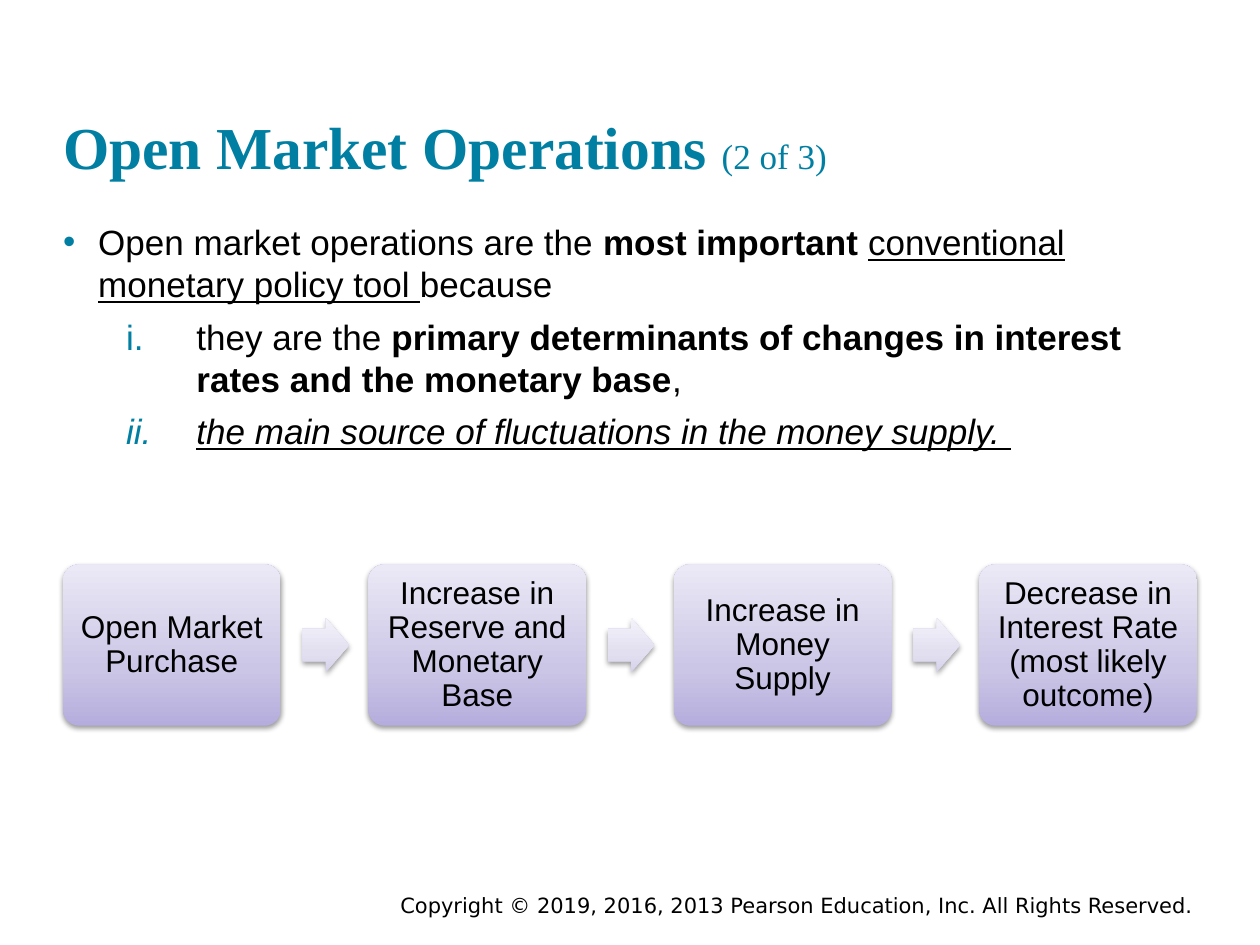
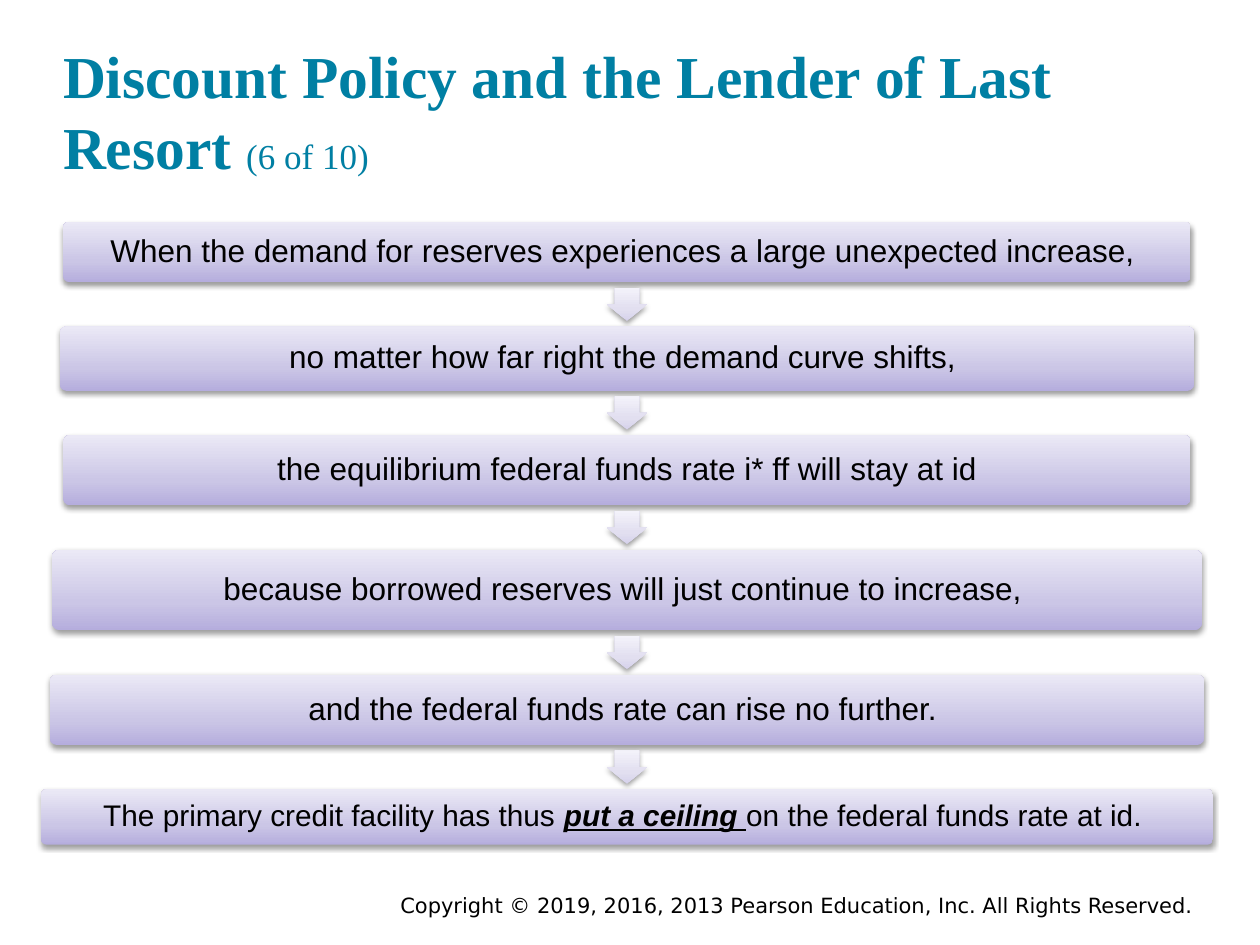
import copy
import dataclasses

import pptx
import pptx.dml.color
import pptx.enum.shapes
import pptx.enum.text
import pptx.oxml
import pptx.oxml.ns
import pptx.oxml.xmlchemy
import pptx.util

Cm = pptx.util.Cm
Pt = pptx.util.Pt
qn = pptx.oxml.ns.qn
new_element = pptx.oxml.xmlchemy.OxmlElement
ALIGN = pptx.enum.text.PP_ALIGN
ANCHOR = pptx.enum.text.MSO_ANCHOR
PRESET = pptx.enum.shapes.MSO_SHAPE


@dataclasses.dataclass(frozen=True)
class Theme:
    accent: str = "007FA3"
    ink: str = "000000"
    box_stops: tuple = ((0, "B5ADDD"), (0.35, "CBC6E6"), (1, "EBE9F6"))
    arrow_stops: tuple = ((0, "D6D2EB"), (0.35, "E2DFF0"), (1, "F3F2FA"))
    title_font: str = "Times New Roman"
    body_font: str = "Arial"
    footer_font: str = "DejaVu Sans"
    title_size: int = 34
    body_size: int = 20
    step_size: int = 18
    footer_size: int = 12


THEME = Theme()
COPYRIGHT = "Copyright © 2019, 2016, 2013 Pearson Education, Inc. All Rights Reserved."
MARGIN, CONTENT_WIDTH = 1.27, 22.86
SHADOW = (
    '<a:outerShdw xmlns:a="http://schemas.openxmlformats.org/drawingml/2006/main"'
    ' blurRad="39370" dist="20320" dir="5400000" rotWithShape="0">'
    '<a:srgbClr val="000000"><a:alpha val="38000"/></a:srgbClr></a:outerShdw>'
)


def rgb(value):
    return pptx.dml.color.RGBColor.from_string(value)


# Text
def add_text(paragraph, text, *, size=THEME.body_size, font=THEME.body_font,
             color=THEME.ink, bold=False, italic=False, underline=False):
    run = paragraph.add_run()
    run.text = text
    run.font.size = Pt(size)
    run.font.name = font
    run.font.color.rgb = rgb(color)
    run.font.bold, run.font.italic, run.font.underline = bold, italic, underline


def set_frame(frame, anchor, inset):
    frame.word_wrap = True
    frame.auto_size = pptx.enum.text.MSO_AUTO_SIZE.NONE
    frame.vertical_anchor = anchor
    frame.margin_left = frame.margin_right = Cm(inset)
    frame.margin_top = frame.margin_bottom = Cm(inset)


def place(shape, left, top, width, height):
    shape.left, shape.top, shape.width, shape.height = map(
        Cm, (left, top, width, height))


def set_bullet(paragraph, marker, value, left, hanging):
    """marker is the bullet element: a:buChar or a:buAutoNum."""
    properties = paragraph._p.get_or_add_pPr()
    properties.set("marL", str(Cm(left)))
    properties.set("indent", str(-Cm(hanging)))
    bullet_color = new_element("a:buClr")
    accent = new_element("a:srgbClr")
    accent.set("val", THEME.accent)
    bullet_color.append(accent)
    bullet_font = new_element("a:buFont")
    bullet_font.set("typeface", THEME.body_font)
    bullet = new_element(marker)
    bullet.set("char" if marker == "a:buChar" else "type", value)
    properties.extend((bullet_color, bullet_font, bullet))


# Parts shared by the slides
def start_slide(deck, layout, heading, counter):
    slide = deck.slides.add_slide(deck.slide_layouts.get_by_name(layout))
    title = slide.shapes.title
    place(title, MARGIN, 0.61, CONTENT_WIDTH, 3.05)
    set_frame(title.text_frame, ANCHOR.BOTTOM, 0)
    line = title.text_frame.paragraphs[0]
    line.alignment = ALIGN.LEFT
    style = dict(font=THEME.title_font, color=THEME.accent)
    add_text(line, heading + " ", size=THEME.title_size, bold=True, **style)
    add_text(line, counter, **style)

    footer = slide.shapes.add_textbox(Cm(7.49), Cm(17.86), Cm(17.15), Cm(0.76))
    footer.text_frame.word_wrap = True
    notice = footer.text_frame.paragraphs[0]
    notice.alignment = ALIGN.CENTER
    add_text(notice, COPYRIGHT, size=THEME.footer_size, font=THEME.footer_font)
    return slide


def add_shaded(slide, preset, stops, left, top, width, height, adjustments):
    shape = slide.shapes.add_shape(
        preset, Cm(left), Cm(top), Cm(width), Cm(height))
    for index, value in enumerate(adjustments):
        shape.adjustments[index] = value
    shape.line.fill.background()
    shape.fill.gradient()
    shape.fill.gradient_angle = 90
    properties = shape._element.spPr
    stop_list = properties.find(qn("a:gradFill")).find(qn("a:gsLst"))
    stop_list.append(copy.deepcopy(stop_list[0]))
    for stop, (position, color) in zip(shape.fill.gradient_stops, stops):
        stop.position = position
        stop.color.rgb = rgb(color)
    shape.shadow.inherit = False
    properties.find(qn("a:effectLst")).append(pptx.oxml.parse_xml(SHADOW))
    return shape


def add_step(slide, runs, left, top, width, height, size=THEME.step_size):
    step = add_shaded(slide, PRESET.ROUNDED_RECTANGLE, THEME.box_stops,
                      left, top, width, height, (0.1,))
    set_frame(step.text_frame, ANCHOR.MIDDLE, 0.18)
    label = step.text_frame.paragraphs[0]
    label.alignment = ALIGN.CENTER
    label.line_spacing = 0.9
    for text, style in runs:
        add_text(label, text, size=size, **style)


def add_arrow(slide, preset, left, top, width, height):
    add_shaded(slide, preset, THEME.arrow_stops, left, top, width, height, (0.6, 0.5))


# Slide content
def add_reasons(slide):
    reasons = slide.placeholders[1]
    place(reasons, MARGIN, 4.45, CONTENT_WIDTH, 12.57)
    set_frame(reasons.text_frame, ANCHOR.TOP, 0)
    top_bullet = ("a:buChar", "•", 0.71, 0.71)
    numeral = ("a:buAutoNum", "romanLcPeriod", 2.69, 1.42)
    items = [
        (0, top_bullet, 0, [
            ("Open market operations are the ", {}),
            ("most important ", dict(bold=True)),
            ("conventional monetary policy tool ", dict(underline=True)),
            ("because", {})]),
        (1, numeral, 6, [
            ("they are the ", {}),
            ("primary determinants of changes in interest rates and the monetary base",
             dict(bold=True)),
            (",", {})]),
        (1, numeral, 6, [
            ("the main source of fluctuations in the money supply. ",
             dict(italic=True, underline=True))]),
    ]
    frame = reasons.text_frame
    for index, (level, bullet, space, runs) in enumerate(items):
        item = frame.add_paragraph() if index else frame.paragraphs[0]
        item.level = level
        set_bullet(item, *bullet)
        item.space_before = Pt(space)
        for text, style in runs:
            add_text(item, text, **style)


def add_purchase_chain(slide):
    steps = ("Open Market Purchase",
             "Increase in Reserve and Monetary Base",
             "Increase in Money Supply",
             "Decrease in Interest Rate (most likely outcome)")
    top, width, height = 11.38, 4.39, 3.25
    arrow_width, arrow_height = 0.94, 1.09
    pitch = (CONTENT_WIDTH - width) / (len(steps) - 1)
    for index, text in enumerate(steps):
        left = MARGIN + index * pitch
        if index:
            add_arrow(slide, PRESET.RIGHT_ARROW, left - pitch + 1.1 * width,
                      top + (height - arrow_height) / 2, arrow_width, arrow_height)
        add_step(slide, [(text, {})], left, top, width, height)


def add_discount_chain(slide):
    # Each step: width, height, type size, runs
    size = THEME.step_size
    steps = [
        (22.73, 1.22, size, [("When the demand for reserves experiences a large "
                              "unexpected increase, ", {})]),
        (22.86, 1.3, size, [("no matter how far right the demand curve shifts, ", {})]),
        (22.73, 1.42, size, [("the equilibrium federal funds rate i* ff will stay at id",
                              {})]),
        (23.19, 1.63, size, [("because borrowed reserves will just continue to "
                              "increase, ", {})]),
        (23.27, 1.42, size, [("and the federal funds rate can rise no further. ", {})]),
        (23.62, 1.12, size - 1, [
            ("The primary credit facility has thus ", {}),
            ("put a ceiling ", dict(bold=True, italic=True, underline=True)),
            ("on the federal funds rate at id. ", {})]),
    ]
    center, top, gap = 12.64, 4.47, 0.89
    arrow_width, arrow_height = 0.81, 0.67
    for index, (width, height, type_size, runs) in enumerate(steps):
        if index:
            add_arrow(slide, PRESET.DOWN_ARROW, center - arrow_width / 2,
                      top - (gap + arrow_height) / 2, arrow_width, arrow_height)
        add_step(slide, runs, center - width / 2, top, width, height, type_size)
        top += height + gap


def main():
    deck = pptx.Presentation()
    deck.slide_width, deck.slide_height = Cm(25.4), Cm(19.05)

    operations = start_slide(deck, "Title and Content",
                             "Open Market Operations", "(2 of 3)")
    add_reasons(operations)
    add_purchase_chain(operations)

    discount = start_slide(deck, "Title Only",
                           "Discount Policy and the Lender of Last Resort", "(6 of 10)")
    add_discount_chain(discount)

    deck.save("out.pptx")


if __name__ == "__main__":
    main()
